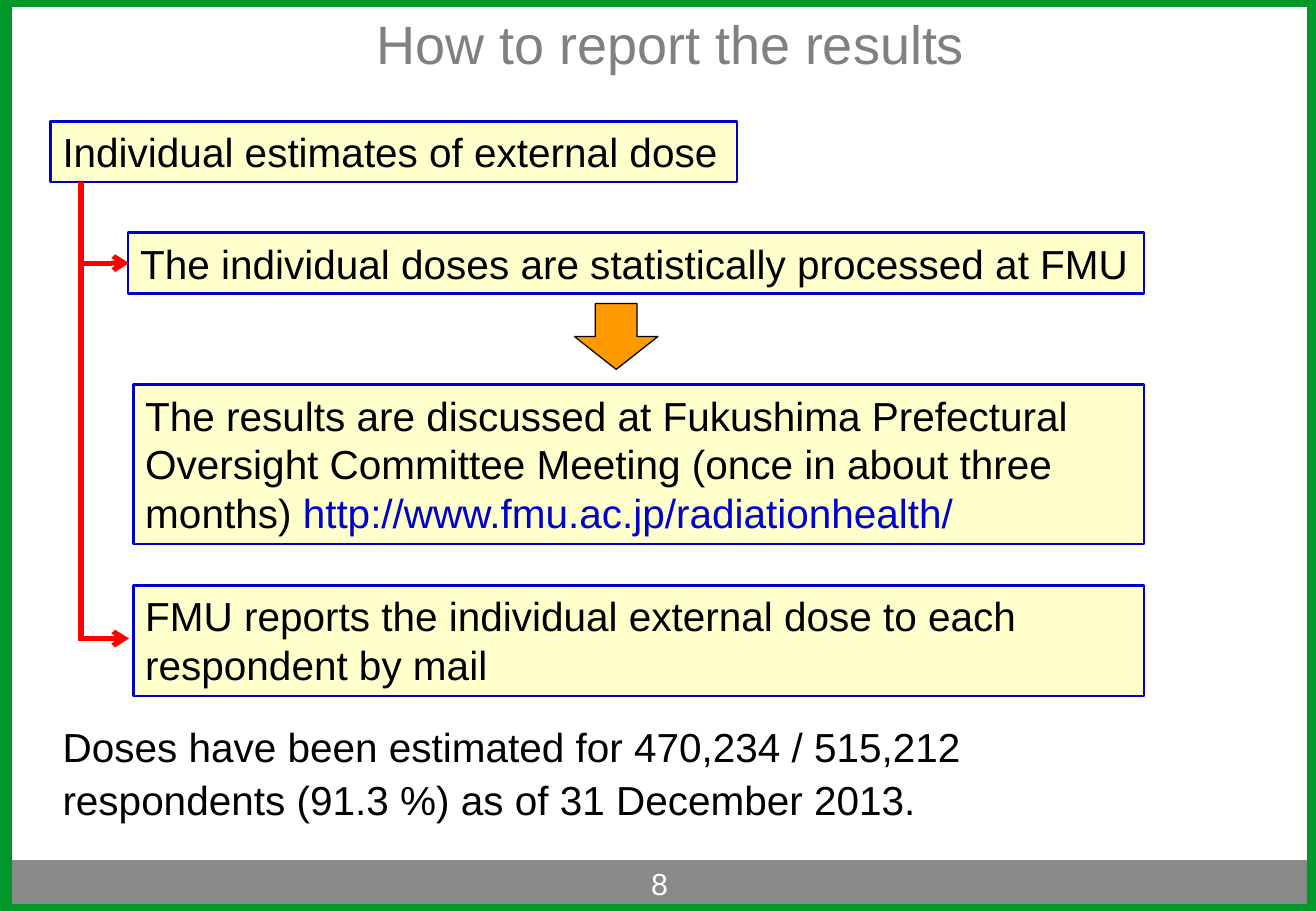
from lxml import etree
from pptx import Presentation
from pptx.dml.color import RGBColor
from pptx.enum import shapes, text
from pptx.oxml.ns import qn
from pptx.util import Pt

COLORS = {
    "green": "00972B", "bar": "888A89", "bar_edge": "8E908F", "title": "808080",
    "panel": "FFFFCC", "blue": "0000CC", "red": "FF0000", "orange": "FF9900",
    "black": "000000", "white": "FFFFFF",
}
LEFT = text.PP_ALIGN.LEFT
CENTER = text.PP_ALIGN.CENTER
TOP = text.MSO_ANCHOR.TOP
MIDDLE = text.MSO_ANCHOR.MIDDLE
RECT = shapes.MSO_SHAPE.RECTANGLE


class ReportSlide:
    """Holds the style and the slide that is being built."""

    font = "Arial"

    def __init__(self, slide):
        self.slide = slide

    def color(self, name):
        return RGBColor.from_string(COLORS[name])

    def shape(self, kind, box, fill, edge, weight):
        shape = self.slide.shapes.add_shape(kind, *map(Pt, box))
        shape.shadow.inherit = False
        if fill:
            shape.fill.solid()
            shape.fill.fore_color.rgb = self.color(fill)
        else:
            shape.fill.background()
        shape.line.color.rgb = self.color(edge)
        shape.line.width = Pt(weight)
        return shape

    def fill_text(self, frame, runs, size=24, align=LEFT, anchor=TOP, wrap=True, spacing=None):
        for key, value in {"word_wrap": wrap, "vertical_anchor": anchor}.items():
            setattr(frame, key, value)
        paragraph = frame.paragraphs[0]
        paragraph.alignment = align
        if spacing:
            paragraph.line_spacing = Pt(spacing)
        for words, color in runs:
            run = paragraph.add_run()
            run.text = words
            for key, value in {"name": self.font, "size": Pt(size)}.items():
                setattr(run.font, key, value)
            run.font.color.rgb = self.color(color)

    def label(self, box, words, color, **style):
        frame = self.slide.shapes.add_textbox(*map(Pt, box)).text_frame
        self.fill_text(frame, [(words, color)], **style)

    def panel(self, box, *runs, wrap=True):
        panel = self.shape(RECT, box, "panel", "blue", 1.5)
        self.fill_text(panel.text_frame, runs, wrap=wrap)

    def line(self, start, end, arrow=False):
        line = self.slide.shapes.add_connector(
            shapes.MSO_CONNECTOR.STRAIGHT, *map(Pt, start + end))
        line.line.color.rgb = self.color("red")
        line.line.width = Pt(3)
        properties = line._element.spPr
        if arrow:
            etree.SubElement(properties.find(qn("a:ln")), qn("a:tailEnd"), type="arrow")
        etree.SubElement(properties, qn("a:effectLst"))


def main():
    deck = Presentation()
    deck.slide_width, deck.slide_height = Pt(780), Pt(540)
    report = ReportSlide(deck.slides.add_slide(deck.slide_layouts[6]))

    report.shape(RECT, (0, 510, 779, 30), "bar", "bar_edge", 0.75)
    report.shape(RECT, (3, 0, 775.5, 540), None, "green", 8)
    report.label((16.5, 0, 762, 51), "How to report the results", "title",
                 size=32, align=CENTER, anchor=MIDDLE)
    report.label((309.5, 506.5, 163, 34.5), "8", "white",
                 size=18, align=CENTER, anchor=MIDDLE)

    report.panel((30, 72, 407, 36),
                 ("Individual estimates of external dose", "black"), wrap=False)
    report.panel((76, 138, 602, 36),
                 ("The individual doses are statistically processed at FMU", "black"))
    report.panel((79, 228, 599, 94.5),
                 ("The results are discussed at Fukushima Prefectural Oversight Committee "
                  "Meeting (once in about three months) ", "black"),
                 ("http://www.fmu.ac.jp/radiationhealth/", "blue"))
    report.panel((79, 347, 599, 65.5),
                 ("FMU reports the individual external dose to each respondent by mail", "black"))

    trunk = 48
    report.line((trunk, 108), (trunk, 380))
    for branch in (156, 378.5):
        report.line((trunk, branch), (trunk + 28.5, branch), arrow=True)
    report.shape(shapes.MSO_SHAPE.DOWN_ARROW, (340.5, 180, 49.5, 39), "orange", "black", 0.75)

    report.label((30, 422.5, 585, 70),
                 "Doses have been estimated for 470,234 / 515,212 respondents (91.3 %) "
                 "as of 31 December 2013.", "black", spacing=31)
    deck.save("out.pptx")


if __name__ == "__main__":
    main()
